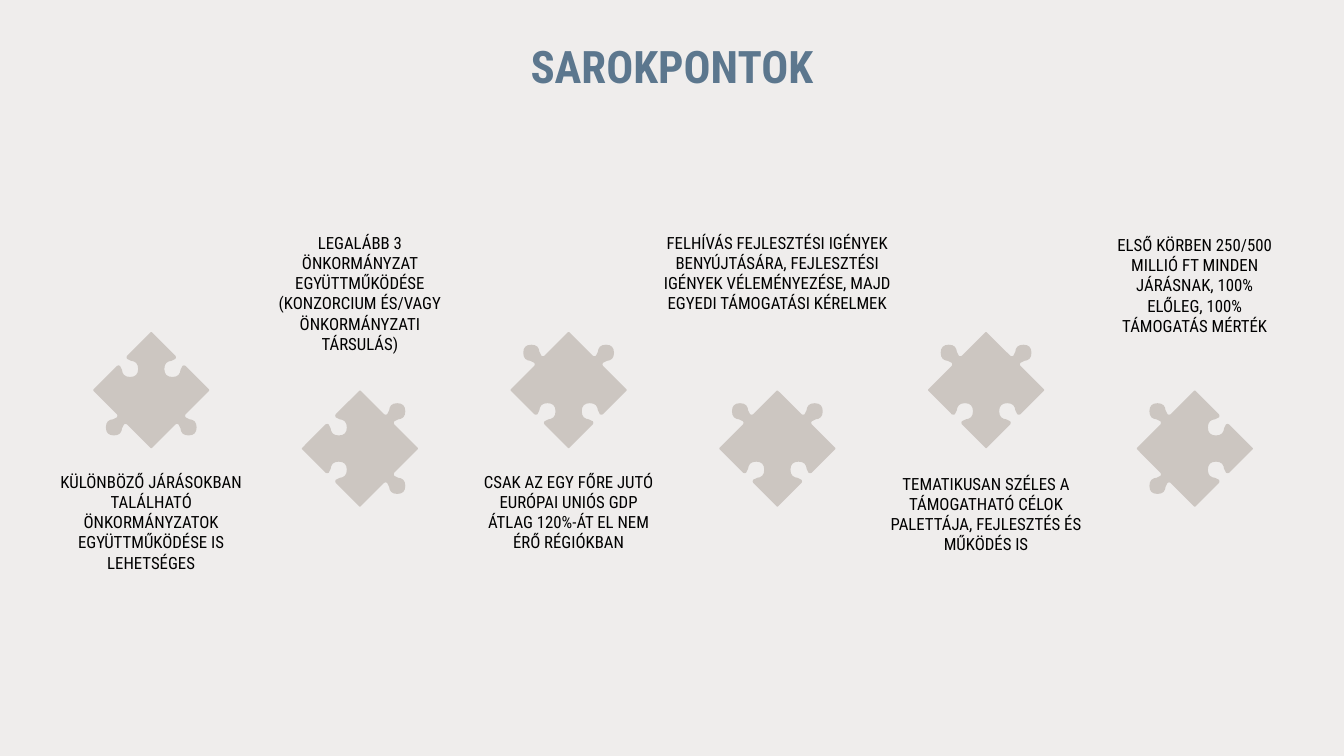
from pptx import Presentation
from pptx.dml.color import RGBColor
from pptx.enum.text import MSO_ANCHOR, PP_ALIGN
from pptx.util import Inches, Pt

CENTER = PP_ALIGN.CENTER
TOP = MSO_ANCHOR.TOP
FONT = "Roboto Condensed"
PAPER = RGBColor(0xEF, 0xED, 0xEC)
STONE = RGBColor(0xCC, 0xC6, 0xC1)
SLATE = RGBColor(0x5C, 0x77, 0x8E)
BLACK = RGBColor(0, 0, 0)

SLIDE_WIDTH, SLIDE_HEIGHT = 13.33, 7.5
FIRST_CENTER, COLUMN_STEP = 1.5, 2.07
UPPER_PIECE, LOWER_PIECE = 3.87, 4.45
UPPER_TEXT, LOWER_TEXT, TEXT_HEIGHT = 2.26, 4.63, 1.57
TAB, SOCKET = 1, -1
NARROW_INSET, WIDE_INSET = (0.1, 0.05), (0.13, 0.07)

TITLE = "SAROKPONTOK"
POINTS = [
    ("KÜLÖNBÖZŐ JÁRÁSOKBAN TALÁLHATÓ ÖNKORMÁNYZATOK EGYÜTTMŰKÖDÉSE IS LEHETSÉGES",
     2, NARROW_INSET, 10, (SOCKET, TAB, TAB, SOCKET)),
    ("LEGALÁBB 3 ÖNKORMÁNYZAT EGYÜTTMŰKÖDÉSE (KONZORCIUM ÉS/VAGY ÖNKORMÁNYZATI TÁRSULÁS)",
     2, NARROW_INSET, 10, (SOCKET, SOCKET, TAB, TAB)),
    ("CSAK AZ EGY FŐRE JUTÓ EURÓPAI UNIÓS GDP ÁTLAG 120%-ÁT EL NEM ÉRŐ RÉGIÓKBAN",
     2, NARROW_INSET, 10, (TAB, SOCKET, SOCKET, TAB)),
    ("FELHÍVÁS FEJLESZTÉSI IGÉNYEK BENYÚJTÁSÁRA, FEJLESZTÉSI IGÉNYEK VÉLEMÉNYEZÉSE, "
     "MAJD EGYEDI TÁMOGATÁSI KÉRELMEK",
     2.51, NARROW_INSET, 10, (TAB, SOCKET, SOCKET, TAB)),
    ("TEMATIKUSAN SZÉLES A TÁMOGATHATÓ CÉLOK PALETTÁJA, FEJLESZTÉS ÉS MŰKÖDÉS IS",
     2.31, WIDE_INSET, 0, (TAB, SOCKET, SOCKET, TAB)),
    ("ELSŐ KÖRBEN 250/500 MILLIÓ FT MINDEN JÁRÁSNAK, 100% ELŐLEG, 100% TÁMOGATÁS MÉRTÉK",
     2, WIDE_INSET, 0, (TAB, TAB, SOCKET, SOCKET)),
]

EDGE_OFFSET = 0.58
HALF_EDGE = [
    (0.57, 0), (0.1, 0), (0.08, 0.01), (0.07, 0.03), (0.08, 0.06), (0.09, 0.09),
    (0.11, 0.12), (0.12, 0.16), (0.11, 0.2), (0.08, 0.24), (0.04, 0.27), (0, 0.28),
]
EDGE = HALF_EDGE + [(-along, out) for along, out in reversed(HALF_EDGE[:-1])]


def piece_outline(sides):
    """Return a piece's outline, counter-clockwise from its upper left side."""
    outline = []
    for turns, direction in enumerate(sides):
        for along, out in EDGE:
            reach = direction * out + EDGE_OFFSET
            x, y = (along - reach) / 2, -(along + reach) / 2
            for _ in range(turns):
                x, y = y, -x
            outline.append((x, y))
    return outline


def add_piece(page, center_x, center_y, sides):
    """Draw one puzzle piece."""
    corners = [(Inches(center_x + x), Inches(center_y + y)) for x, y in piece_outline(sides)]
    builder = page.shapes.build_freeform(*corners[0])
    builder.add_line_segments(corners[1:], close=True)
    piece = builder.convert_to_shape()
    piece.shadow.inherit = False
    piece.fill.solid()
    piece.fill.fore_color.rgb = STONE
    piece.line.fill.background()


def add_text(page, text, left, top, width, height, inset, size, color):
    """Add a centered text box and return its paragraph."""
    box = page.shapes.add_textbox(Inches(left), Inches(top), Inches(width), Inches(height))
    frame = box.text_frame
    frame.word_wrap = True
    frame.vertical_anchor = TOP
    frame.margin_left = frame.margin_right = Inches(inset[0])
    frame.margin_top = frame.margin_bottom = Inches(inset[1])
    para = frame.paragraphs[0]
    para.text = text
    para.alignment = CENTER
    para.font.name = FONT
    para.font.size = Pt(size)
    para.font.color.rgb = color
    return para


def main():
    """Build the slide."""
    deck = Presentation()
    deck.slide_width, deck.slide_height = Inches(SLIDE_WIDTH), Inches(SLIDE_HEIGHT)
    page = deck.slides.add_slide(deck.slide_layouts[6])
    page.background.fill.solid()
    page.background.fill.fore_color.rgb = PAPER

    title = add_text(page, TITLE, 0, 0.4, SLIDE_WIDTH, 1.06, NARROW_INSET, 32, SLATE)
    title.font.bold = True
    title.line_spacing = 0.9

    for column, (text, width, inset, gap, sides) in enumerate(POINTS):
        center = FIRST_CENTER + column * COLUMN_STEP
        is_low = column % 2 == 1
        text_top = UPPER_TEXT if is_low else LOWER_TEXT
        para = add_text(page, text, center - width / 2, text_top, width, TEXT_HEIGHT,
                        inset, 12, BLACK)
        para.space_before = Pt(gap)
        add_piece(page, center, LOWER_PIECE if is_low else UPPER_PIECE, sides)

    deck.save("out.pptx")


if __name__ == "__main__":
    main()
